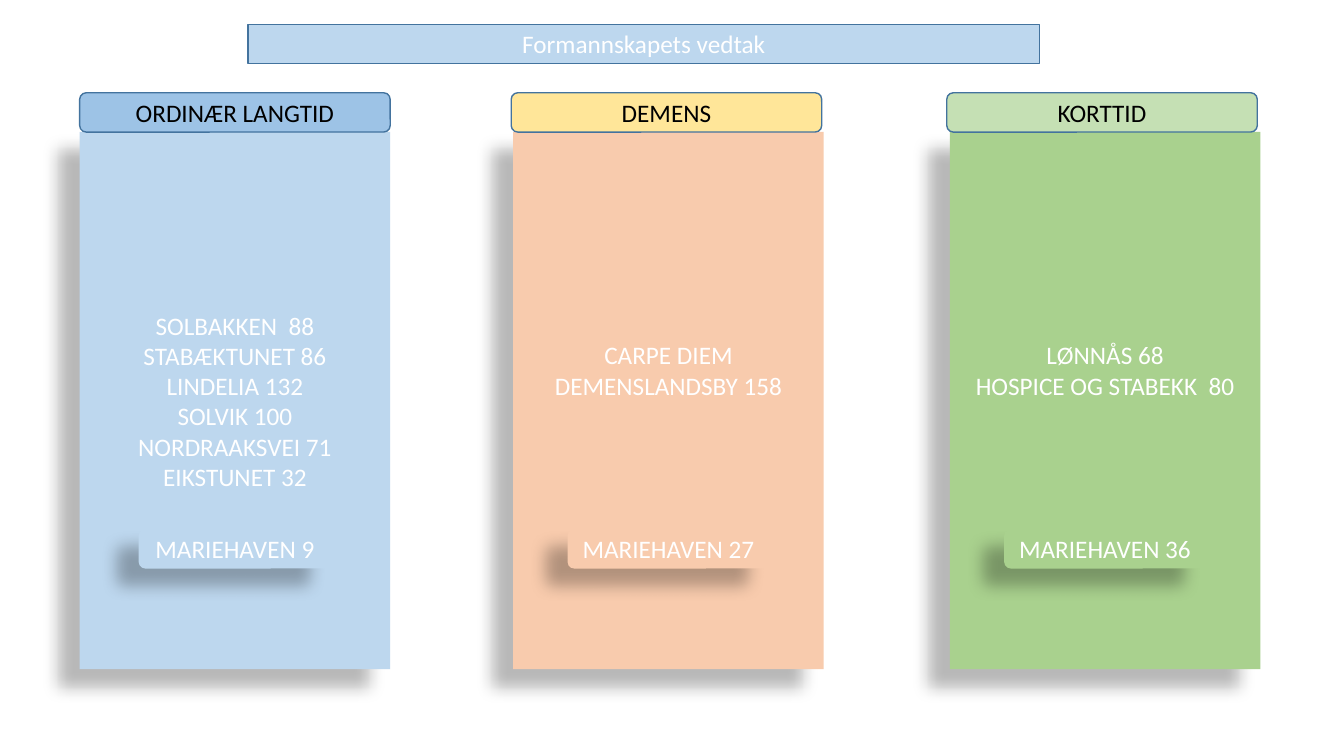
import dataclasses
import lxml.etree
import pptx
import pptx.dml.color
import pptx.enum.shapes
import pptx.enum.text
import pptx.oxml.ns
import pptx.util

SHAPES = pptx.enum.shapes.MSO_SHAPE
SLIDE_WIDTH, SLIDE_HEIGHT = 13.33, 7.5
BAR_HEIGHT = 0.39
PANEL_WIDTH, PANEL_HEIGHT = 3.08, 5.33
HEADER_TOP = 0.92
NOTE_DROP = 3.94
INSET = 0.05
LINE_HEIGHT = 0.305


@dataclasses.dataclass(frozen=True)
class Theme:
    font: str = "Calibri"
    size: float = 18
    light: str = "FFFFFF"
    dark: str = "000000"
    outline: str = "43739E"
    outline_width: float = 1
    banner: str = "BDD7EE"
    shadow: str = "000000"
    shadow_alpha: int = 28
    shadow_blur: float = 11.8
    shadow_distance: float = 19.7
    shadow_angle: int = 141


@dataclasses.dataclass(frozen=True)
class Column:
    left: float
    header_left: float
    heading: str
    header_fill: str
    panel_fill: str
    places: tuple
    lifted_lines: int
    note: str
    note_width: float


THEME = Theme()
COLUMNS = (
    Column(0.79, 0.79, "ORDINÆR LANGTID", "9DC3E6", "BDD7EE",
           ("SOLBAKKEN  88", "STABÆKTUNET 86", "LINDELIA 132", "SOLVIK 100",
            "NORDRAAKSVEI 71", "EIKSTUNET 32"), 0, "MARIEHAVEN 9", 1.91),
    Column(5.09, 5.07, "DEMENS", "FFE699", "F8CBAD",
           ("CARPE DIEM DEMENSLANDSBY 158",), 2, "MARIEHAVEN 27", 2),
    Column(9.42, 9.39, "KORTTID", "C5E0B4", "A9D18E",
           ("LØNNÅS 68", "HOSPICE OG STABEKK  80"), 2, "MARIEHAVEN 36", 2),
)


def rgb(value):
    return pptx.dml.color.RGBColor.from_string(value)


def add_child(parent, tag, **attributes):
    child = lxml.etree.SubElement(parent, pptx.oxml.ns.qn(tag))
    for name, value in attributes.items():
        child.set(name, str(value))
    return child


def cast_shadow(shape):
    effects = shape.element.spPr.find(pptx.oxml.ns.qn("a:effectLst"))
    shadow = add_child(effects, "a:outerShdw",
                       blurRad=int(pptx.util.Pt(THEME.shadow_blur)),
                       dist=int(pptx.util.Pt(THEME.shadow_distance)),
                       dir=THEME.shadow_angle * 60000, algn="ctr", rotWithShape=0)
    color = add_child(shadow, "a:srgbClr", val=THEME.shadow)
    add_child(color, "a:alpha", val=THEME.shadow_alpha * 1000)


def paint(shape, fill, outlined):
    """Give an outlined flat shape, or a borderless one with a shadow."""
    shape.fill.solid()
    shape.fill.fore_color.rgb = rgb(fill)
    shape.shadow.inherit = False
    if outlined:
        shape.line.color.rgb = rgb(THEME.outline)
        shape.line.width = pptx.util.Pt(THEME.outline_width)
    else:
        shape.line.fill.background()
        cast_shadow(shape)


def write(shape, lines, color, lifted_lines=0):
    """Centre the lines; lifted_lines keeps that much room free below them."""
    frame = shape.text_frame
    frame.word_wrap = True
    frame.auto_size = pptx.enum.text.MSO_AUTO_SIZE.NONE
    frame.vertical_anchor = pptx.enum.text.MSO_ANCHOR.MIDDLE
    frame.margin_bottom = pptx.util.Inches(INSET + lifted_lines * LINE_HEIGHT)
    for index, line in enumerate(lines):
        paragraph = frame.add_paragraph() if index else frame.paragraphs[0]
        paragraph.alignment = pptx.enum.text.PP_ALIGN.CENTER
        run = paragraph.add_run()
        run.text = line
        run.font.name = THEME.font
        run.font.size = pptx.util.Pt(THEME.size)
        run.font.color.rgb = rgb(color)


def add_box(slide, kind, box, fill, outlined=False):
    shape = slide.shapes.add_shape(kind, *map(pptx.util.Inches, box))
    paint(shape, fill, outlined)
    return shape


def place_title(slide, text, box):
    title = slide.shapes.title
    title.left, title.top, title.width, title.height = map(pptx.util.Inches, box)
    geometry = add_child(title.element.spPr, "a:prstGeom", prst="roundRect")
    add_child(geometry, "a:avLst")
    paint(title, THEME.banner, outlined=True)
    write(title, [text], THEME.light)


def add_column(slide, column, top):
    """Draw a heading bar, the panel below it and a note centred on the panel."""
    panel_top = top + BAR_HEIGHT
    panel = add_box(slide, SHAPES.RECTANGLE,
                    (column.left, panel_top, PANEL_WIDTH, PANEL_HEIGHT), column.panel_fill)
    write(panel, column.places, THEME.light, column.lifted_lines)

    header = add_box(slide, SHAPES.ROUNDED_RECTANGLE,
                     (column.header_left, top, PANEL_WIDTH, BAR_HEIGHT),
                     column.header_fill, outlined=True)
    write(header, [column.heading], THEME.dark)

    note_left = column.left + (PANEL_WIDTH - column.note_width) / 2
    note = add_box(slide, SHAPES.ROUNDED_RECTANGLE,
                   (note_left, panel_top + NOTE_DROP, column.note_width, BAR_HEIGHT),
                   column.panel_fill)
    write(note, [column.note], THEME.light)


def main():
    presentation = pptx.Presentation()
    presentation.slide_width = pptx.util.Inches(SLIDE_WIDTH)
    presentation.slide_height = pptx.util.Inches(SLIDE_HEIGHT)
    title_only = presentation.slide_layouts.get_by_name("Title Only")
    slide = presentation.slides.add_slide(title_only)
    place_title(slide, "Formannskapets vedtak", (2.46, 0.24, 7.85, BAR_HEIGHT))
    for column in COLUMNS:
        add_column(slide, column, HEADER_TOP)
    presentation.save("out.pptx")


if __name__ == "__main__":
    main()
